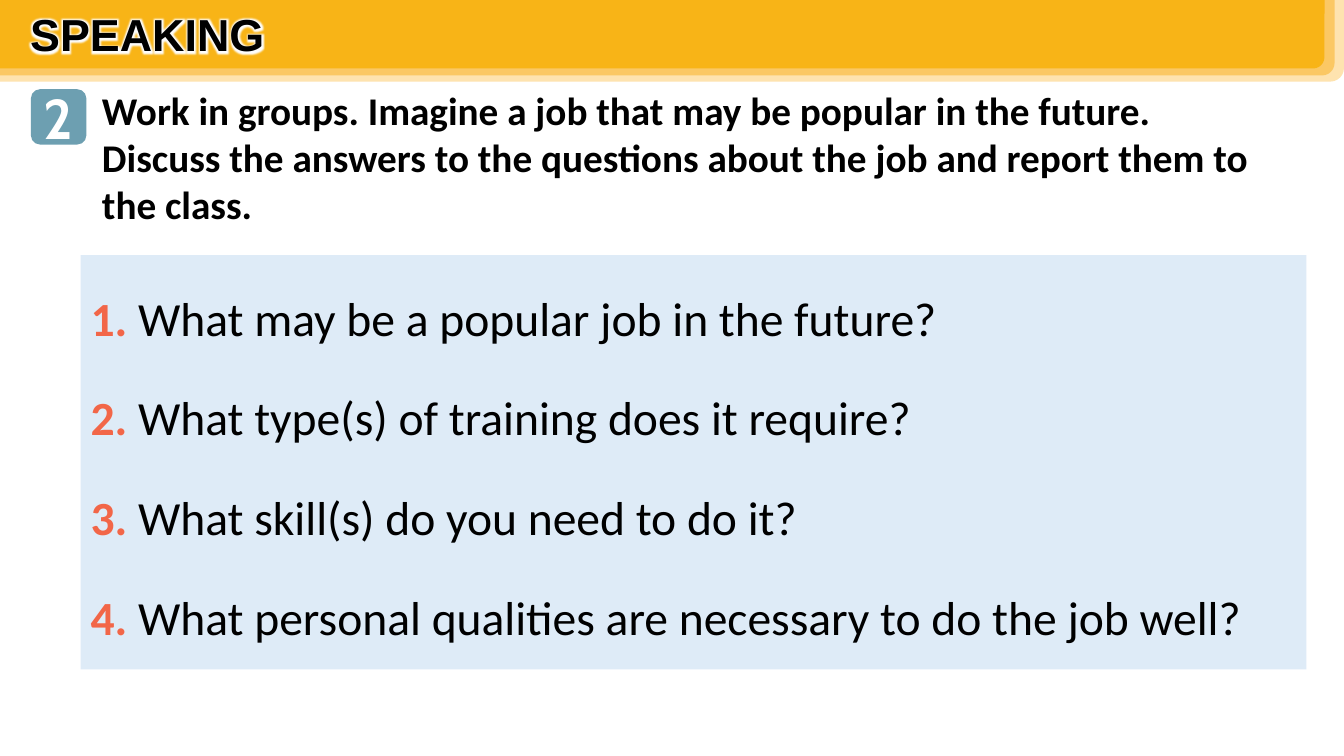
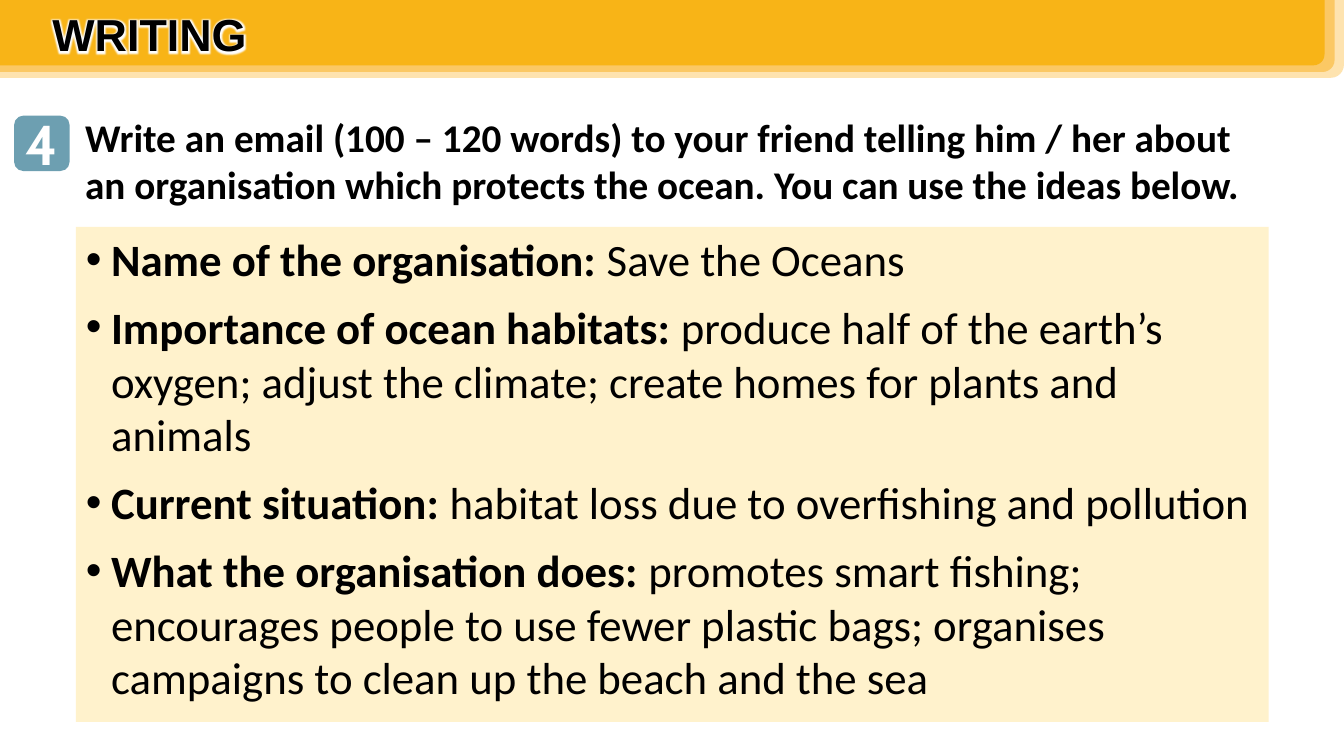
import pptx
import pptx.dml.color
import pptx.enum.shapes
import pptx.enum.text
import pptx.oxml
import pptx.oxml.ns
import pptx.util

SLIDE_WIDTH = pptx.util.Inches(13.33)
SLIDE_HEIGHT = pptx.util.Inches(7.5)
PRESETS = pptx.enum.shapes.MSO_SHAPE
ALIGN = pptx.enum.text.PP_ALIGN
ANCHOR = pptx.enum.text.MSO_ANCHOR
qn = pptx.oxml.ns.qn

BLACK, WHITE = "000000", "FFFFFF"
BADGE_BLUE, NUMBER_RED = "6D9FB1", "F26648"
QUESTION_BLUE, IDEA_CREAM = "DEEBF7", "FFF2CC"
HEADER_BANDS = [("FEE3AF", 100, 1), ("FBC864", 99.3, 0.925), ("F8B417", 98.55, 0.84)]

QUESTIONS = [
    "What may be a popular job in the future?",
    "What type(s) of training does it require?",
    "What skill(s) do you need to do it?",
    "What personal qualities are necessary to do the job well?",
]
IDEAS = [
    ("Name of the organisation: ", "Save the Oceans"),
    ("Importance of ocean habitats: ",
     "produce half of the earth’s oxygen; adjust the climate; "
     "create homes for plants and animals"),
    ("Current situation: ", "habitat loss due to overfishing and pollution"),
    ("What the organisation does: ",
     "promotes smart fishing; encourages people to use fewer plastic bags; "
     "organises campaigns to clean up the beach and the sea"),
]


def rgb(value):
    """Turn a hex string into a colour."""
    return pptx.dml.color.RGBColor.from_string(value)


def share(left, top, width, height):
    """Turn percentages of the slide into a left, top, width, height box."""
    return [int(whole * part / 100) for whole, part in
            zip((SLIDE_WIDTH, SLIDE_HEIGHT) * 2, (left, top, width, height))]


def add_bullet(paragraph):
    """Give a paragraph a round bullet with a hanging indent."""
    properties = paragraph._p.get_or_add_pPr()
    indent = pptx.util.Inches(0.25)
    properties.set("marL", str(indent))
    properties.set("indent", str(-indent))
    for tag, attribute, value in (("a:buFont", "typeface", "Arial"), ("a:buChar", "char", "•")):
        bullet = pptx.oxml.parse_xml(f"<{tag} {pptx.oxml.ns.nsdecls('a')}/>")
        bullet.set(attribute, value)
        properties.append(bullet)


def add_glow(run):
    """Surround the letters of a run with a white glow."""
    glow = pptx.oxml.parse_xml(
        f"<a:effectLst {pptx.oxml.ns.nsdecls('a')}><a:glow rad='63500'>"
        f"<a:srgbClr val='{WHITE}'/></a:glow></a:effectLst>")
    run.font._element.find(qn("a:latin")).addprevious(glow)


def write_text(frame, paragraphs, size=28, font="Calibri", color=BLACK, bold=True,
               align=ALIGN.LEFT, anchor=ANCHOR.TOP, line_spacing=1.0, gap=0, bullets=False):
    """Fill a frame with paragraphs, each a list of (text, run overrides)."""
    frame.word_wrap = True
    frame.auto_size = pptx.enum.text.MSO_AUTO_SIZE.NONE
    frame.vertical_anchor = anchor
    for index, runs in enumerate(paragraphs):
        paragraph = frame.add_paragraph() if index else frame.paragraphs[0]
        paragraph.alignment = align
        paragraph.line_spacing = line_spacing
        paragraph.space_before = pptx.util.Pt(gap if index else 0)
        if bullets:
            add_bullet(paragraph)
        for text, overrides in runs:
            run = paragraph.add_run()
            run.text = text
            run.font.size = pptx.util.Pt(size)
            run.font.name = font
            run.font.bold = overrides.get("bold", bold)
            run.font.color.rgb = rgb(overrides.get("color", color))


def add_block(slide, preset, box, fill):
    """Add a flat filled shape without a line."""
    block = slide.shapes.add_shape(preset, *share(*box))
    block.shadow.inherit = False
    block.fill.solid()
    block.fill.fore_color.rgb = rgb(fill)
    block.line.fill.background()
    return block


def add_header(slide, heading, left, height):
    """Add the stacked yellow bands and put the title on them."""
    for color, width, factor in HEADER_BANDS:
        band = add_block(slide, PRESETS.ROUND_1_RECTANGLE, (0, 0, width, height * factor), color)
        band.element.spPr.find(qn("a:xfrm")).set("flipV", "1")
    title = slide.shapes.title
    title.left, title.top, title.width, title.height = share(left, 0.25, 33.9, 8.5)
    write_text(title.text_frame, [[(heading, {})]], size=32, font="Arial")
    add_glow(title.text_frame.paragraphs[0].runs[0])
    slide.shapes[-1].element.addnext(title.element)


def add_task(slide, number, instruction, left, top, height):
    """Add a numbered badge with the instruction beside it."""
    badge = add_block(slide, PRESETS.ROUNDED_RECTANGLE, (left, top + 1, 4.13, 7.33), BADGE_BLUE)
    frame = badge.text_frame
    frame.margin_left = frame.margin_right = frame.margin_top = frame.margin_bottom = 0
    write_text(frame, [[(number, {})]], size=40, font="Cabin", color=WHITE,
               align=ALIGN.CENTER, anchor=ANCHOR.MIDDLE)
    prompt = slide.shapes.add_textbox(*share(left + 4.55, top, 88.75, height))
    write_text(prompt.text_frame, [[(instruction, {})]])


def add_panel(slide, box, fill, paragraphs, **text_format):
    """Add a tinted panel of paragraphs."""
    panel = add_block(slide, PRESETS.RECTANGLE, box, fill)
    write_text(panel.text_frame, paragraphs, gap=10, **text_format)


def main():
    """Build and save the two lesson slides."""
    deck = pptx.Presentation()
    deck.slide_width, deck.slide_height = SLIDE_WIDTH, SLIDE_HEIGHT
    title_only = deck.slide_layouts[5]

    speaking = deck.slides.add_slide(title_only)
    add_header(speaking, "SPEAKING", left=1.5, height=10.8)
    add_task(speaking, "2", "Work in groups. Imagine a job that may be popular in the future. "
             "Discuss the answers to the questions about the job and report them to the class.",
             left=2.3, top=10.8, height=20.1)
    questions = [[(f"{number}. ", {"color": NUMBER_RED, "bold": True}), (question, {})]
                 for number, question in enumerate(QUESTIONS, 1)]
    add_panel(speaking, (6, 33.75, 91.2, 54.8), QUESTION_BLUE, questions,
              size=34, bold=False, line_spacing=1.5)

    writing = deck.slides.add_slide(title_only)
    add_header(writing, "WRITING", left=3.15, height=10.3)
    add_task(writing, "4", "Write an email (100 – 120 words) to your friend telling him / her "
             "about an organisation which protects the ocean. You can use the ideas below.",
             left=1.05, top=14.3, height=13.9)
    ideas = [[(label, {"bold": True}), (detail, {})] for label, detail in IDEAS]
    add_panel(writing, (5.65, 30, 88.75, 65.5), IDEA_CREAM, ideas,
              size=32, bold=False, bullets=True)

    deck.save("out.pptx")


if __name__ == "__main__":
    main()
